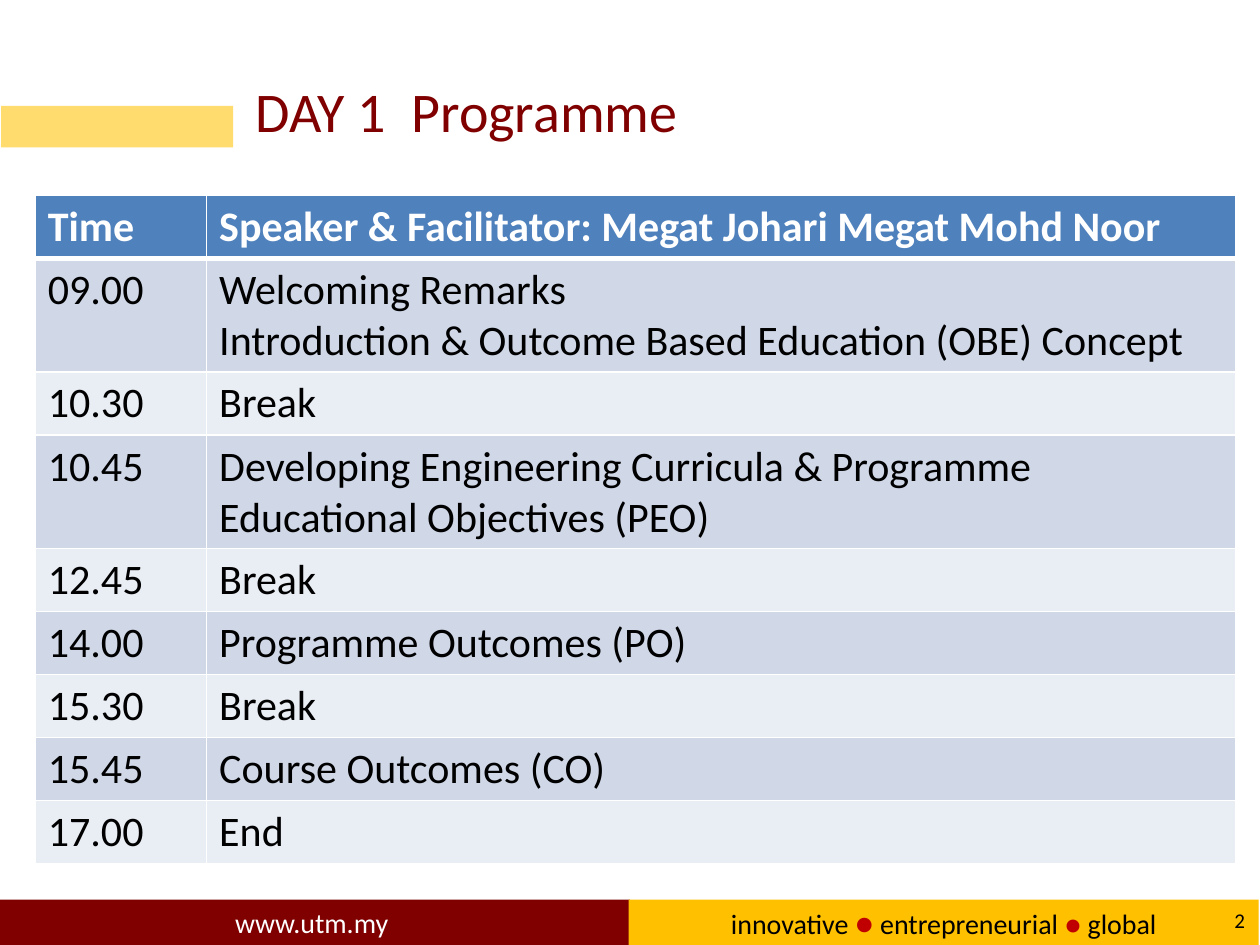
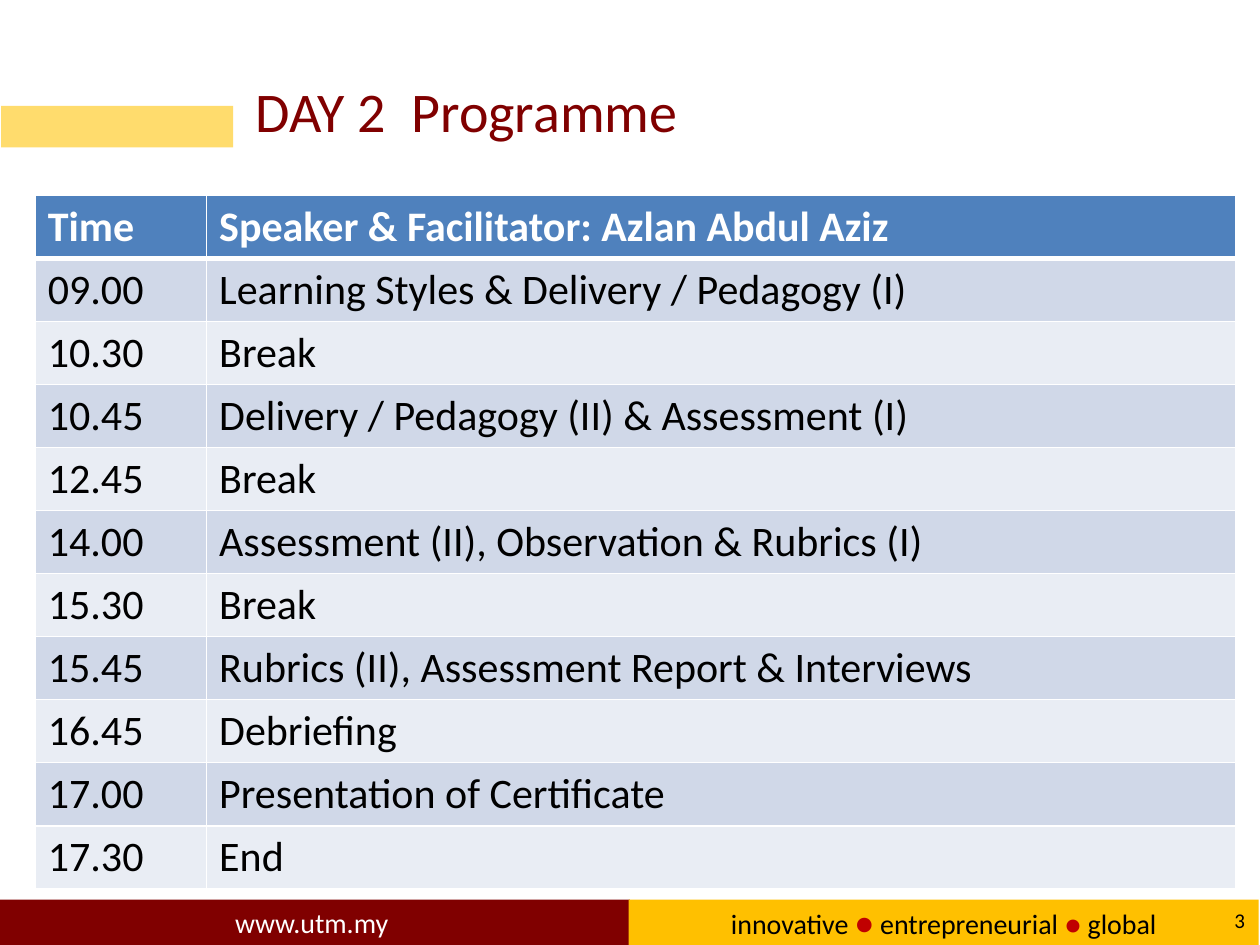
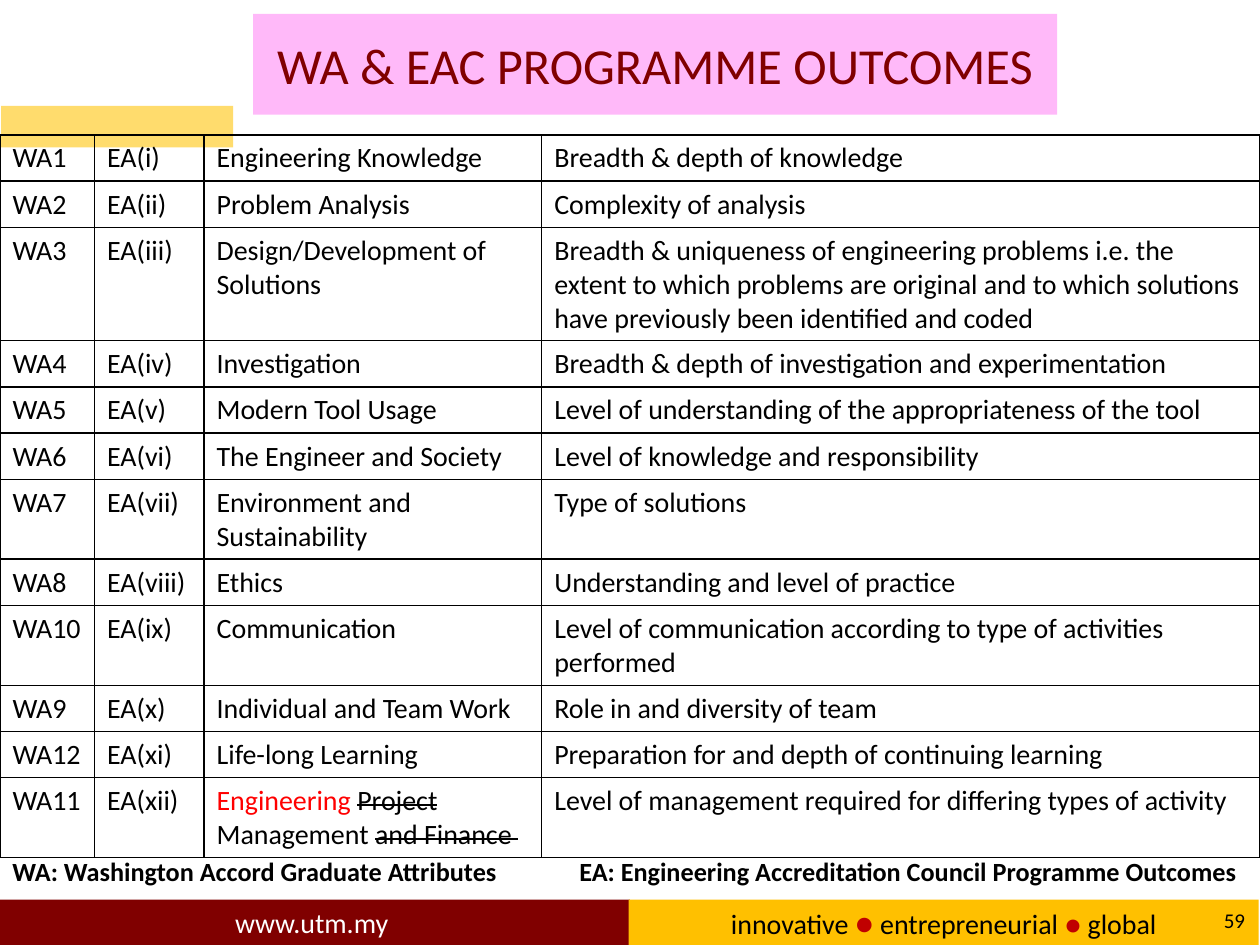
from dataclasses import dataclass
from typing import NamedTuple, Optional

from lxml.etree import SubElement
from pptx import Presentation
from pptx.dml.color import RGBColor
from pptx.enum.shapes import MSO_SHAPE
from pptx.enum.text import MSO_ANCHOR as Anchor, MSO_AUTO_SIZE as AutoSize, PP_ALIGN as Align
from pptx.oxml.ns import qn
from pptx.util import Inches, Pt

FONT = "Calibri"
MAROON, GOLD, PALE_GOLD, PINK = "800000", "FFC000", "FFDC6D", "FFB9F9"
BLACK, WHITE, DOT_RED, RED = "000000", "FFFFFF", "C00000", "FF0000"
HEADER_BLUE, BAND_DARK, BAND_LIGHT = "4F81BD", "D0D8E8", "E9EDF4"
CELL_PADDING = 0.1
TITLE_ONLY = 5


class Box(NamedTuple):
    """Left, top, width and height in inches."""
    left: float
    top: float
    width: float
    height: float


@dataclass(frozen=True)
class Span:
    """A stretch of text with one format."""
    text: str
    size: float
    color: str = BLACK
    bold: bool = False
    strike: bool = False


@dataclass(frozen=True)
class Band:
    """A plain coloured rectangle with optional text."""
    box: Box
    color: str
    spans: tuple[Span, ...] = ()


@dataclass(frozen=True)
class Row:
    """Table cells, with the number of lines in the tallest one."""
    cells: tuple
    lines: int = 1


@dataclass(frozen=True)
class TableStyle:
    """Sizes and border colour of a table."""
    left: float
    top: float
    columns: tuple[float, ...]
    font_size: float
    line_height: float
    border: str


BANDS = (
    Band(Box(0, 7.14, 5, 0.36), MAROON, (Span("www.utm.my ", 16, WHITE),)),
    Band(Box(4.99, 7.14, 5, 0.36), GOLD, (
        Span("innovative ", 16), Span("●", 18, DOT_RED), Span(" entrepreneurial ", 16),
        Span("● ", 16, DOT_RED), Span("global", 16))),
    Band(Box(0.01, 0.84, 1.84, 0.33), PALE_GOLD),
)
NUMBER_BOX = Box(9.33, 7.1, 0.65, 0.4)
DAY_TITLE_BOX = Box(1.93, 0.52, 7.41, 0.71)
OUTCOMES_TITLE_BOX = Box(2.01, 0.11, 6.38, 0.8)
LEGEND_BOX = Box(0, 6.74, 10, 0.35)
LEGEND_TAB = 4.5

DAY_STYLE = TableStyle(0.28, 1.55, (1.36, 8.17), 24, 0.4, WHITE)
OUTCOMES_STYLE = TableStyle(0, 1.07, (0.75, 0.87, 2.68, 5.7), 16, 0.26, BLACK)

DAY_1 = (
    Row(("Time", "Speaker & Facilitator: Megat Johari Megat Mohd Noor")),
    Row(("09.00", "Welcoming Remarks\nIntroduction & Outcome Based Education (OBE) Concept"), 2),
    Row(("10.30", "Break")),
    Row(("10.45", "Developing Engineering Curricula & Programme Educational Objectives (PEO)"), 2),
    Row(("12.45", "Break")),
    Row(("14.00", "Programme Outcomes (PO)")),
    Row(("15.30", "Break")),
    Row(("15.45", "Course Outcomes (CO)")),
    Row(("17.00", "End")),
)
DAY_2 = (
    Row(("Time", "Speaker & Facilitator: Azlan Abdul Aziz")),
    Row(("09.00", "Learning Styles & Delivery / Pedagogy (I)")),
    Row(("10.30", "Break")),
    Row(("10.45", "Delivery / Pedagogy (II) & Assessment (I)")),
    Row(("12.45", "Break")),
    Row(("14.00", "Assessment (II), Observation & Rubrics (I)")),
    Row(("15.30", "Break")),
    Row(("15.45", "Rubrics (II), Assessment Report & Interviews")),
    Row(("16.45", "Debriefing")),
    Row(("17.00", "Presentation of Certificate")),
    Row(("17.30", "End")),
)
MANAGEMENT = (
    Span("Engineering ", 16, RED), Span("Project", 16, strike=True),
    Span(" Management ", 16), Span("and Finance ", 16, strike=True),
)
OUTCOMES = (
    Row(("WA1", "EA(i)", "Engineering Knowledge", "Breadth & depth of knowledge")),
    Row(("WA2", "EA(ii)", "Problem Analysis", "Complexity of analysis")),
    Row(("WA3", "EA(iii)", "Design/Development of Solutions",
         "Breadth & uniqueness of engineering problems i.e. the extent to which problems are "
         "original and to which solutions have previously been identified and coded"), 3),
    Row(("WA4", "EA(iv)", "Investigation", "Breadth & depth of investigation and experimentation")),
    Row(("WA5", "EA(v)", "Modern Tool Usage",
         "Level of understanding of the appropriateness of the tool")),
    Row(("WA6", "EA(vi)", "The Engineer and Society", "Level of knowledge and responsibility")),
    Row(("WA7", "EA(vii)", "Environment and Sustainability", "Type of solutions"), 2),
    Row(("WA8", "EA(viii)", "Ethics", "Understanding and level of practice")),
    Row(("WA10", "EA(ix)", "Communication",
         "Level of communication according to type of activities performed"), 2),
    Row(("WA9", "EA(x)", "Individual and Team Work", "Role in and diversity of team")),
    Row(("WA12", "EA(xi)", "Life-long Learning",
         "Preparation for and depth of continuing learning")),
    Row(("WA11", "EA(xii)", MANAGEMENT,
         "Level of management required for differing types of activity"), 2),
)


def rgb(color: str) -> RGBColor:
    """Turn a hex string into a colour."""
    return RGBColor.from_string(color)


def inches(box: Box) -> tuple:
    """Convert a box to lengths."""
    return tuple(Inches(value) for value in box)


def format_run(run, span: Span) -> None:
    """Give a run the format of a span."""
    run.font.name = FONT
    run.font.size = Pt(span.size)
    run.font.bold = span.bold
    run.font.color.rgb = rgb(span.color)
    if span.strike:
        run.font._element.set("strike", "sngStrike")


def write_spans(paragraph, spans: tuple[Span, ...]) -> None:
    """Add the spans to a paragraph as runs."""
    for span in spans:
        run = paragraph.add_run()
        run.text = span.text
        format_run(run, span)


def write_text(text_frame, span: Span, align: Optional[Align] = None) -> None:
    """Set the text of a frame in one format."""
    text_frame.text = span.text
    for paragraph in text_frame.paragraphs:
        paragraph.alignment = align
        for run in paragraph.runs:
            format_run(run, span)


def add_band(slide, band: Band) -> None:
    """Draw a coloured rectangle with centred text."""
    shape = slide.shapes.add_shape(MSO_SHAPE.RECTANGLE, *inches(band.box))
    shape.shadow.inherit = False
    shape.fill.solid()
    shape.fill.fore_color.rgb = rgb(band.color)
    shape.line.fill.background()
    shape.text_frame.vertical_anchor = Anchor.MIDDLE
    paragraph = shape.text_frame.paragraphs[0]
    paragraph.alignment = Align.CENTER
    write_spans(paragraph, band.spans)


def add_text_box(slide, box: Box, span: Span, align: Align, anchor: Anchor):
    """Add a wrapping text box and return its frame."""
    text_frame = slide.shapes.add_textbox(*inches(box)).text_frame
    text_frame.word_wrap = True
    text_frame.vertical_anchor = anchor
    write_text(text_frame, span, align)
    return text_frame


def start_slide(presentation, number: int, title: Span, box: Box, align: Align):
    """Add a slide with bands, number and title."""
    slide = presentation.slides.add_slide(presentation.slide_layouts[TITLE_ONLY])
    for band in BANDS:
        add_band(slide, band)
    add_text_box(slide, NUMBER_BOX, Span(str(number), 12), Align.RIGHT, Anchor.MIDDLE)
    shape = slide.shapes.title
    shape.left, shape.top, shape.width, shape.height = inches(box)
    shape.text_frame.auto_size = AutoSize.NONE
    shape.text_frame.vertical_anchor = Anchor.MIDDLE
    write_text(shape.text_frame, title, align)
    return slide


def set_borders(cell, color: str, top: float = 1, bottom: float = 1) -> None:
    """Draw the four borders of a cell, with widths in points."""
    properties = cell._tc.get_or_add_tcPr()
    for side, width in {"L": 1, "R": 1, "T": top, "B": bottom}.items():
        line = SubElement(properties, qn(f"a:ln{side}"), w=str(Pt(width)))
        fill = SubElement(line, qn("a:solidFill"))
        SubElement(fill, qn("a:srgbClr"), val=color)


def add_table(slide, rows: tuple[Row, ...], style: TableStyle, header: bool) -> None:
    """Draw a table, banded in blue when it has a header."""
    heights = [CELL_PADDING + style.line_height * row.lines for row in rows]
    box = Box(style.left, style.top, sum(style.columns), sum(heights))
    table = slide.shapes.add_table(len(rows), len(style.columns), *inches(box)).table
    table.first_row = header
    table.horz_banding = False
    for column, width in zip(table.columns, style.columns):
        column.width = Inches(width)
    for index, (row, height) in enumerate(zip(rows, heights)):
        table.rows[index].height = Inches(height)
        is_header = header and index == 0
        for cell, content in zip(table.rows[index].cells, row.cells):
            set_borders(cell, style.border, 3 if header and index == 1 else 1, 3 if is_header else 1)
            if header:
                cell.fill.solid()
                band = BAND_DARK if index % 2 else BAND_LIGHT
                cell.fill.fore_color.rgb = rgb(HEADER_BLUE if is_header else band)
            else:
                cell.fill.background()
            if isinstance(content, str):
                color = WHITE if is_header else BLACK
                write_text(cell.text_frame, Span(content, style.font_size, color, is_header))
            else:
                write_spans(cell.text_frame.paragraphs[0], content)


def add_legend(slide) -> None:
    """Explain the abbreviations under the outcomes table."""
    text = ("WA: Washington Accord Graduate Attributes\t"
            "EA: Engineering Accreditation Council Programme Outcomes")
    text_frame = add_text_box(slide, LEGEND_BOX, Span(text, 15, bold=True), Align.LEFT, Anchor.TOP)
    properties = text_frame.paragraphs[0]._p.get_or_add_pPr()
    tabs = SubElement(properties, qn("a:tabLst"))
    SubElement(tabs, qn("a:tab"), pos=str(Inches(LEGEND_TAB)), algn="l")


def add_day_slide(presentation, number: int, title: str, rows: tuple[Row, ...]) -> None:
    """Add the programme of one day."""
    slide = start_slide(presentation, number, Span(title, 32, MAROON), DAY_TITLE_BOX, Align.LEFT)
    add_table(slide, rows, DAY_STYLE, header=True)


def add_outcomes_slide(presentation) -> None:
    """Add the table of programme outcomes."""
    title = Span("WA & EAC PROGRAMME OUTCOMES", 28.8, MAROON)
    slide = start_slide(presentation, 59, title, OUTCOMES_TITLE_BOX, Align.CENTER)
    slide.shapes.title.fill.solid()
    slide.shapes.title.fill.fore_color.rgb = rgb(PINK)
    add_legend(slide)
    add_table(slide, OUTCOMES, OUTCOMES_STYLE, header=False)


def main() -> None:
    """Build and save the presentation."""
    presentation = Presentation()
    presentation.slide_width, presentation.slide_height = Inches(10), Inches(7.5)
    add_day_slide(presentation, 2, "DAY 1  Programme", DAY_1)
    add_day_slide(presentation, 3, "DAY 2  Programme", DAY_2)
    add_outcomes_slide(presentation)
    presentation.save("out.pptx")


if __name__ == "__main__":
    main()
